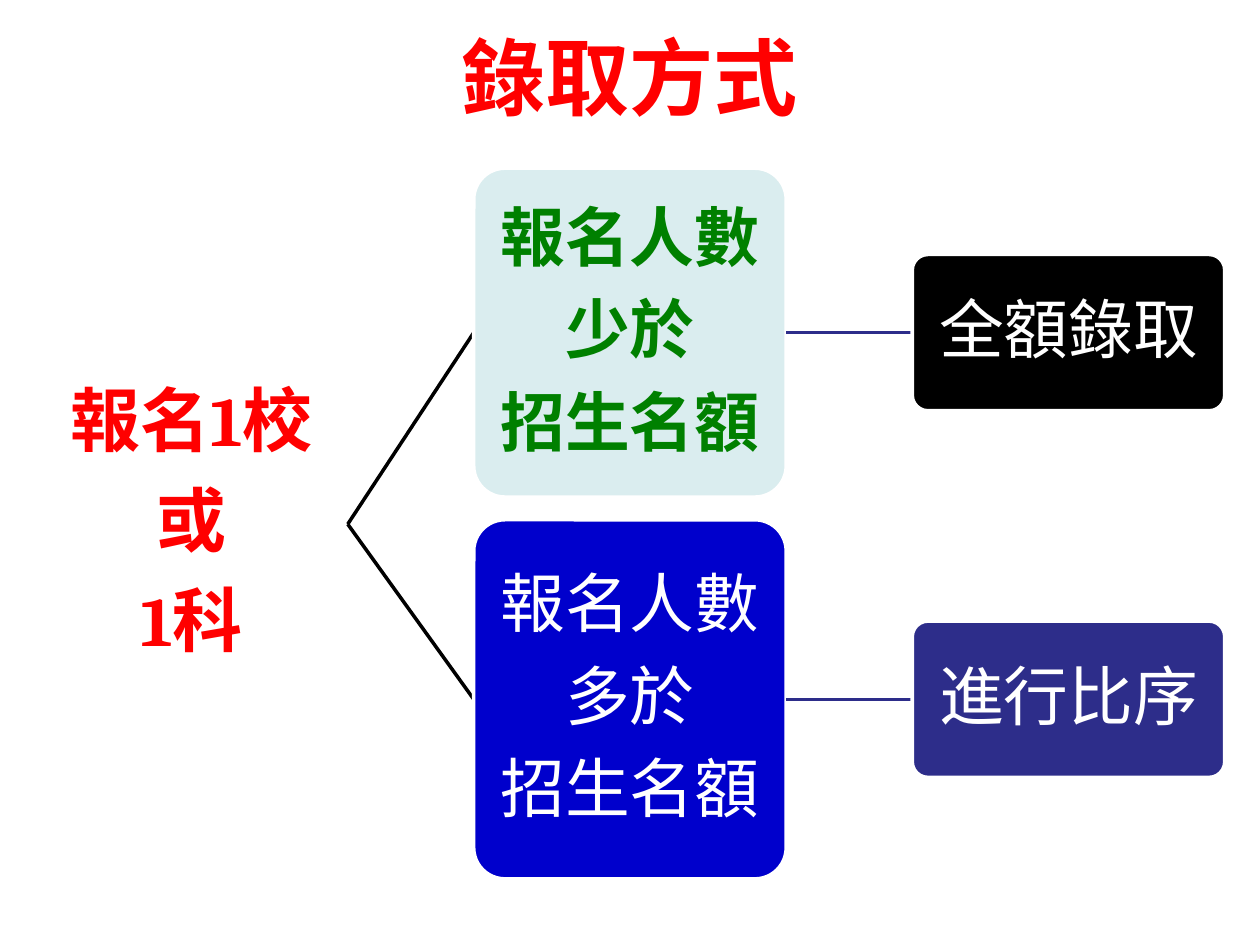
"""Build the admission method slide: a title above a three-column decision tree."""
from lxml.etree import SubElement
from pptx import Presentation
from pptx.dml.color import RGBColor
from pptx.enum.shapes import MSO_CONNECTOR as Connector, MSO_SHAPE as Shape
from pptx.enum.text import MSO_ANCHOR as Anchor, PP_ALIGN as Align
from pptx.oxml.ns import qn
from pptx.util import Inches, Pt


def color(value):
    return RGBColor.from_string(value)


def write(shape, lines, inset, font_format, text_color, spacing):
    frame = shape.text_frame
    frame.word_wrap = True
    frame.vertical_anchor = Anchor.MIDDLE
    for side in ("left", "right", "top", "bottom"):
        setattr(frame, f"margin_{side}", Inches(inset))
    for index, line in enumerate(lines):
        paragraph = frame.paragraphs[0] if index == 0 else frame.add_paragraph()
        paragraph.text = line
        for name, value in {"alignment": Align.CENTER, **spacing}.items():
            setattr(paragraph, name, value)
        for name, value in font_format.items():
            setattr(paragraph.font, name, value)
        paragraph.font.color.rgb = color(text_color)


presentation = Presentation()
presentation.slide_width = Inches(10)
presentation.slide_height = Inches(7.5)
slide = presentation.slides.add_slide(presentation.slide_layouts[6])

title = slide.shapes.add_textbox(0, Inches(0.02), presentation.slide_width, Inches(1.17))
title_font = {"name": "Noto Sans CJK SC", "size": Pt(48), "bold": True}
write(title, ["錄取方式"], 0.05, title_font, "FF0000", {})

MARGIN, COLUMN, WIDTH = 0.28, 3.48, 2.48
ROOT, UPPER, LOWER = 4.16, 2.64, 5.55
nodes = [
    ("root", None, 0, ROOT, 2.54, None, "FF0000", 40, True, ["報名1校", "或", "1科"]),
    ("fewer", "root", 1, UPPER, 2.61, "DAEDEF", "008000", 37, True, ["報名人數", "少於", "招生名額"]),
    ("admit all", "fewer", 2, UPPER, 1.24, "000000", "FFFFFF", 37, False, ["全額錄取"]),
    ("more", "root", 1, LOWER, 2.85, "0000CC", "FFFFFF", 37, False, ["報名人數", "多於", "招生名額"]),
    ("rank", "more", 2, LOWER, 1.24, "2D2D8A", "FFFFFF", 37, False, ["進行比序"]),
]
link_colors = {1: "000000", 2: "2D2D8A"}
boxes = {}

for name, parent, column, middle, height, fill, text_color, size, bold, lines in nodes:
    left = MARGIN + column * COLUMN
    bounds = [Inches(length) for length in (left, middle - height / 2, WIDTH, height)]
    if parent:
        link = slide.shapes.add_connector(Connector.STRAIGHT, 0, 0, 0, 0)
        link.line.color.rgb = color(link_colors[column])
        link.line.width = Pt(2)
        SubElement(link.element.spPr, qn("a:effectLst"))
        box = slide.shapes.add_shape(Shape.ROUNDED_RECTANGLE, *bounds)
        box.adjustments[0] = 0.1
        box.shadow.inherit = False
        box.fill.solid()
        box.fill.fore_color.rgb = color(fill)
        box.line.color.rgb = color("FFFFFF")
        box.line.width = Pt(2)
        link.begin_connect(boxes[parent], 3)
        link.end_connect(box, 1)
    else:
        box = slide.shapes.add_textbox(*bounds)
    font_format = {"name": "Cambria", "size": Pt(size), "bold": bold}
    spacing = {"line_spacing": 0.9, "space_after": Pt(size * 0.35)}
    write(box, lines, 0.03, font_format, text_color, spacing)
    boxes[name] = box

presentation.save("out.pptx")
